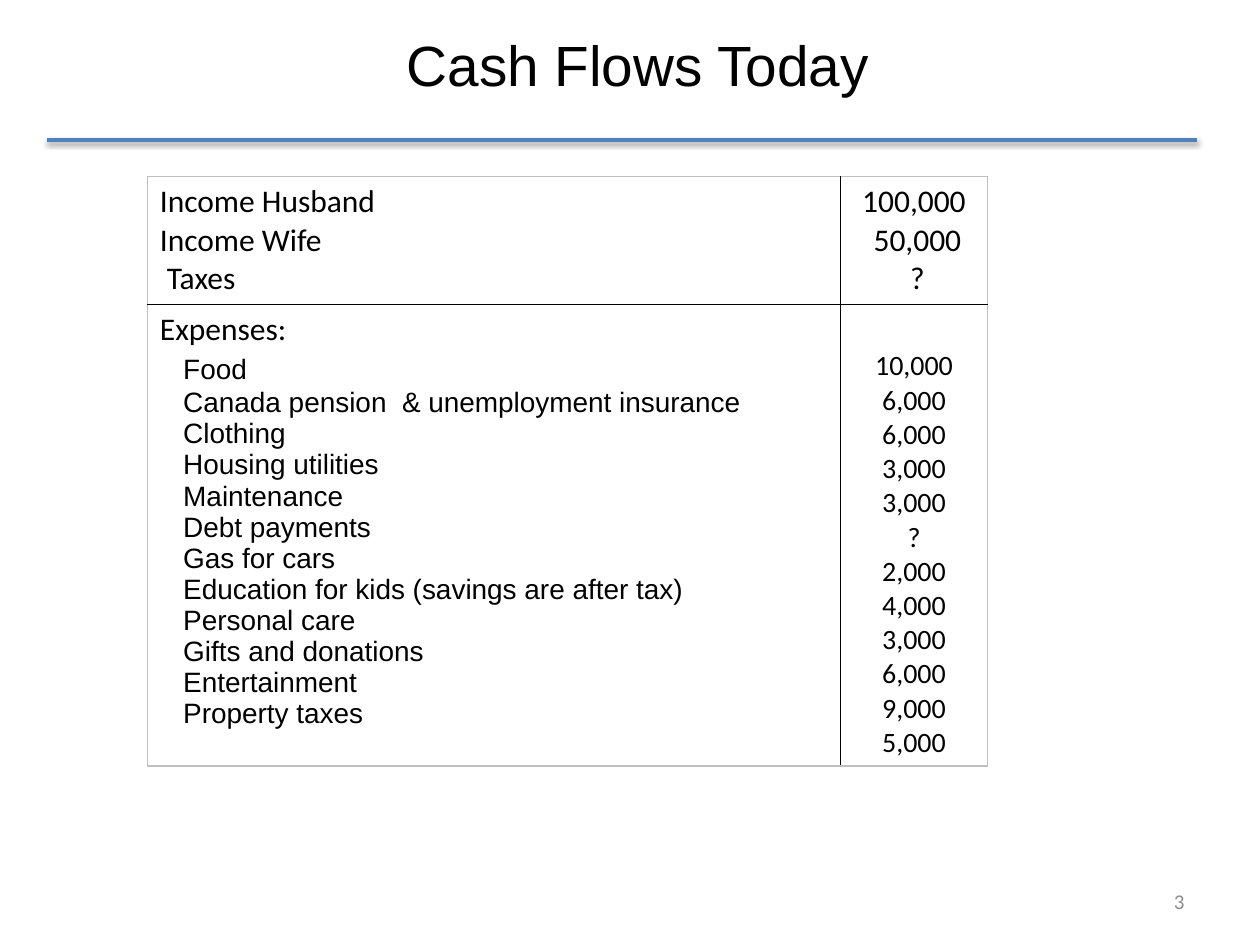
from lxml import etree
from pptx import Presentation
from pptx.dml.color import RGBColor
from pptx.enum.shapes import MSO_CONNECTOR
from pptx.enum.text import MSO_ANCHOR, PP_ALIGN
from pptx.oxml.ns import qn
from pptx.util import Cm, Pt

LEFT, CENTER, RIGHT = PP_ALIGN.LEFT, PP_ALIGN.CENTER, PP_ALIGN.RIGHT
TOP, MIDDLE = MSO_ANCHOR.TOP, MSO_ANCHOR.MIDDLE
STRAIGHT = MSO_CONNECTOR.STRAIGHT

BLACK, GREY, BLUE, OUTER = "000000", "8C8C8C", "4F81BD", "BFBFBF"
SPACE = 0.14  # slight indent, cm
ITEM_INDENT = 0.47

# Each line of income: label, label indent, amount, amount indent
INCOME = [
    ("Income Husband", 0, "100,000", 0),
    ("Income Wife", 0, "50,000", SPACE),
    ("Taxes", SPACE, "?", SPACE),
]
EXPENSES = [
    ("Food", "10,000"),
    ("Canada pension  & unemployment insurance", "6,000"),
    ("Clothing", "6,000"),
    ("Housing utilities", "3,000"),
    ("Maintenance", "3,000"),
    ("Debt payments", "?"),
    ("Gas for cars", "2,000"),
    ("Education for kids (savings are after tax)", "4,000"),
    ("Personal care", "3,000"),
    ("Gifts and donations", "6,000"),
    ("Entertainment", "9,000"),
    ("Property taxes", "5,000"),
]


def rgb(color):
    return RGBColor.from_string(color)


def add_line(tf, text, size, font="Calibri", color=BLACK, align=LEFT, indent=0):
    """Write one paragraph, using the empty first one when it is free."""
    p = tf.paragraphs[0]
    if p.runs:
        p = tf.add_paragraph()
    p.alignment = align
    if indent:
        p._p.get_or_add_pPr().set("marL", str(Cm(indent)))
    r = p.add_run()
    r.text = text
    r.font.size = Pt(size)
    r.font.name = font
    r.font.color.rgb = rgb(color)
    return p


def add_text_box(s, x, y, w, h, anchor):
    sp = s.shapes.add_textbox(Cm(x), Cm(y), Cm(w), Cm(h))
    tf = sp.text_frame
    tf.word_wrap = True
    tf.vertical_anchor = anchor
    return tf


def add_rule(s, x1, x2, y):
    """Horizontal line with a soft shadow below it."""
    line = s.shapes.add_connector(STRAIGHT, Cm(x1), Cm(y), Cm(x2), Cm(y))
    line.line.color.rgb = rgb(BLUE)
    line.line.width = Pt(2)
    effects = etree.SubElement(line._element.spPr, qn("a:effectLst"))
    shadow = etree.SubElement(
        effects, qn("a:outerShdw"), blurRad=str(Pt(3.1)), dist=str(Pt(1.6)),
        dir="5400000", rotWithShape="0")
    black = etree.SubElement(shadow, qn("a:srgbClr"), val=BLACK)
    etree.SubElement(black, qn("a:alpha"), val="38000")


def set_borders(cell, colors):
    """Colours are given for the left, right, top and bottom sides."""
    tc_pr = cell._tc.get_or_add_tcPr()
    for side, color in zip("LRTB", colors):
        ln = etree.SubElement(tc_pr, qn(f"a:ln{side}"), w=str(Pt(1)))
        fill = etree.SubElement(ln, qn("a:solidFill"))
        etree.SubElement(fill, qn("a:srgbClr"), val=color)


def add_cash_table(s, x, y, widths, heights):
    frame = s.shapes.add_table(len(heights), len(widths), Cm(x), Cm(y),
                               Cm(sum(widths)), Cm(sum(heights)))
    table = frame.table
    table.first_row = table.horz_banding = False
    for column, width in zip(table.columns, widths):
        column.width = Cm(width)
    for row, height in zip(table.rows, heights):
        row.height = Cm(height)

    # Grey outside, black between the cells
    for i in range(2):
        for j in range(2):
            cell = table.cell(i, j)
            set_borders(cell, [BLACK if j else OUTER, OUTER if j else BLACK,
                               BLACK if i else OUTER, OUTER if i else BLACK])
            cell.fill.background()
    return table


def fill_income(table):
    labels, amounts = (table.cell(0, j).text_frame for j in range(2))
    for label, label_indent, amount, amount_indent in INCOME:
        add_line(labels, label, 18, indent=label_indent)
        add_line(amounts, amount, 18, align=CENTER, indent=amount_indent)


def fill_expenses(table):
    labels, amounts = (table.cell(1, j).text_frame for j in range(2))
    add_line(labels, "Expenses:", 18)
    table.cell(1, 1).margin_top = Cm(0.9)  # amounts start beside the first item
    for label, amount in EXPENSES:
        add_line(labels, label, 16, "Arial", indent=ITEM_INDENT)
        add_line(amounts, amount, 16, align=CENTER)
    food = labels.paragraphs[1]
    food.space_before, food.space_after = Pt(2.7), Pt(1.4)


def main():
    prs = Presentation()
    prs.slide_width, prs.slide_height = Cm(25.4), Cm(19.05)
    s = prs.slides.add_slide(prs.slide_layouts[6])

    # Title
    tf = add_text_box(s, 1.27, 0.3, 22.86, 3.18, TOP)
    tf.margin_top, tf.margin_left = Cm(0.3), Cm(0.57)
    add_line(tf, "Cash Flows Today", 32.4, "Arial", align=CENTER)

    # Income and expenses
    table = add_cash_table(s, 2.97, 3.56, [13.97, 2.97], [2.58, 9.3])
    fill_income(table)
    fill_expenses(table)

    # Slide number
    tf = add_text_box(s, 18.21, 17.65, 5.92, 1.02, MIDDLE)
    add_line(tf, "3", 12, color=GREY, align=RIGHT)

    # Rule under the title
    add_rule(s, 0.94, 24.13, 2.82)

    prs.save("out.pptx")


if __name__ == "__main__":
    main()
